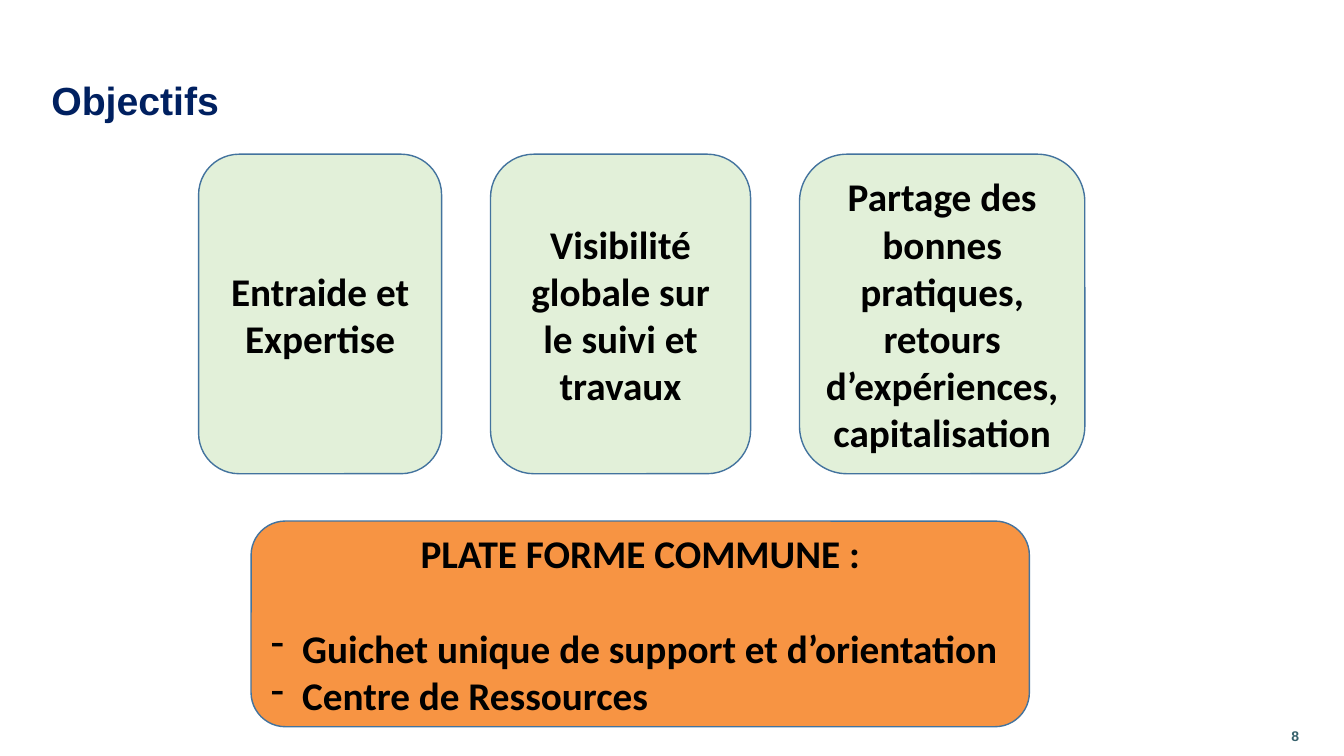
from lxml.etree import SubElement
from pptx import Presentation
from pptx.dml.color import RGBColor
from pptx.enum.shapes import MSO_SHAPE
from pptx.enum.text import MSO_ANCHOR, PP_ALIGN
from pptx.oxml.ns import qn
from pptx.util import Inches, Pt

WIDE, HIGH = Inches(13.33), Inches(7.5)
INK = {"title": "002060", "page": "36616C", "text": "000000",
       "card": "E2F0D9", "base": "F79443", "edge": "43739E"}
FONTS = {
    "title": {"name": "Arial", "size": Pt(28), "bold": True},
    "page": {"name": "Arial", "size": Pt(10), "bold": True},
    "text": {"name": "Calibri", "size": Pt(28), "bold": True},
}

# Card row, in percent of the slide: left edge, gap, and (text, width)
LEFT, GAP = 14.78, 3.64
CARDS = [
    ("Entraide et Expertise", 18.08),
    ("Visibilité globale sur le suivi et travaux", 19.35),
    ("Partage des bonnes pratiques, retours d’expériences, capitalisation", 21.23),
]
ITEMS = ["Guichet unique de support et d’orientation", "Centre de Ressources"]


def color(key):
    return RGBColor.from_string(INK[key])


def place(left, top, width, height):
    """Turn percentages of the slide into lengths."""
    return [int(part * side / 100) for part, side in
            zip((left, top, width, height), (WIDE, HIGH, WIDE, HIGH))]


def write(para, text, style, align=PP_ALIGN.LEFT):
    para.alignment = align
    run = para.add_run()
    run.text = text
    for key, value in FONTS[style].items():
        setattr(run.font, key, value)
    run.font.color.rgb = color(style)


def dash(para):
    props = para._p.get_or_add_pPr()
    props.set("marL", str(Inches(0.31)))
    props.set("indent", str(-Inches(0.31)))
    SubElement(props, qn("a:buFontTx"))
    SubElement(props, qn("a:buChar")).set("char", "-")


def label(slide, text, style, *box):
    frame = slide.shapes.add_textbox(*place(*box)).text_frame
    frame.word_wrap = True
    frame.vertical_anchor = MSO_ANCHOR.MIDDLE
    write(frame.paragraphs[0], text, style)
    return frame


def panel(slide, text, fill, *box):
    shape = slide.shapes.add_shape(MSO_SHAPE.ROUNDED_RECTANGLE, *place(*box))
    shape.shadow.inherit = False
    shape.fill.solid()
    shape.fill.fore_color.rgb = color(fill)
    shape.line.color.rgb = color("edge")
    shape.line.width = Pt(1)
    frame = shape.text_frame
    frame.word_wrap = True
    frame.vertical_anchor = MSO_ANCHOR.MIDDLE
    write(frame.paragraphs[0], text, "text", PP_ALIGN.CENTER)
    return frame


def main():
    deck = Presentation()
    deck.slide_width, deck.slide_height = WIDE, HIGH
    slide = deck.slides.add_slide(deck.slide_layouts[6])

    # Title and page number
    title = label(slide, "Objectifs", "title", 3.08, 10.4, 95.5, 6.53)
    title.paragraphs[0].line_spacing = 0.9
    label(slide, "8", "page", 95.35, 94.67, 4.65, 5.33)

    # Shared platform with its list
    frame = panel(slide, "PLATE FORME COMMUNE :", "base", 18.68, 68.93, 57.91, 27.2)
    frame.paragraphs[0].space_after = Pt(34)
    for item in ITEMS:
        para = frame.add_paragraph()
        dash(para)
        write(para, item, "text")

    # Row of goals
    left = LEFT
    for text, width in CARDS:
        panel(slide, text, "card", left, 20.4, width, 42.27)
        left += width + GAP

    deck.save("out.pptx")


if __name__ == "__main__":
    main()
